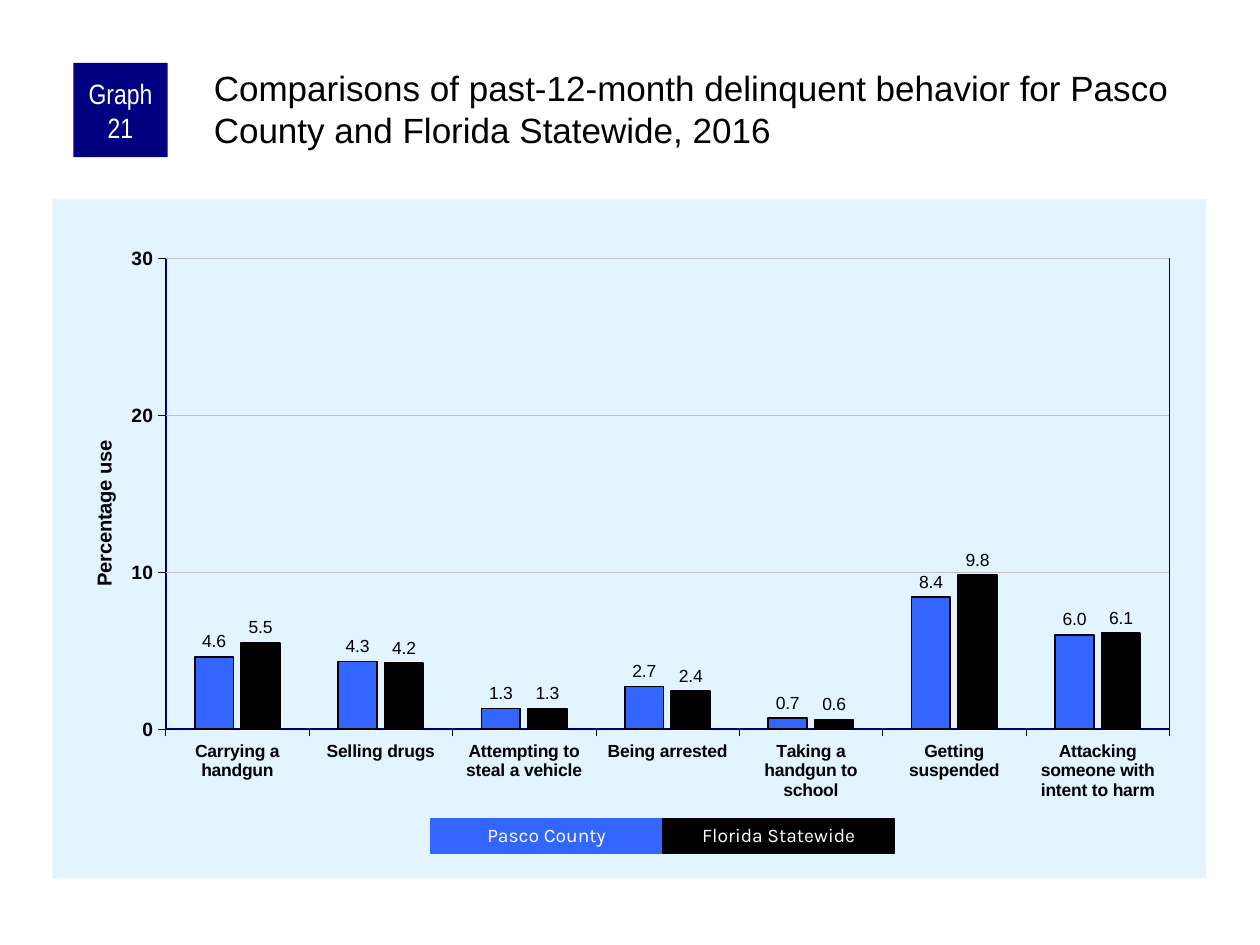
"""Build the slide comparing delinquent behavior in Pasco County and Florida."""
from dataclasses import dataclass

from lxml.etree import SubElement as Sub
from pptx import Presentation
from pptx.chart.data import CategoryChartData as Data
from pptx.dml.color import RGBColor as Rgb
from pptx.enum.chart import XL_CHART_TYPE as Kind
from pptx.enum.chart import XL_LABEL_POSITION as Spot
from pptx.enum.chart import XL_TICK_MARK as Tick
from pptx.enum.shapes import MSO_SHAPE as Form
from pptx.enum.text import MSO_ANCHOR as Anchor
from pptx.enum.text import MSO_AUTO_SIZE as Fit
from pptx.enum.text import PP_ALIGN as Align
from pptx.oxml.ns import qn
from pptx.util import Cm, Pt


@dataclass(frozen=True)
class Theme:
    navy: str = "000080"
    blue: str = "3366FF"
    black: str = "000000"
    white: str = "FFFFFF"
    pale: str = "E1F4FF"
    gray: str = "C0C0C0"
    sans: str = "Arial"
    slim: str = "Arial Narrow"
    key: str = "Karla"
    head: float = 20
    badge: float = 16
    name: float = 11.5
    tag: float = 11
    small: float = 10


T = Theme()
ROWS = [
    ("Carrying a handgun", 4.6, 5.5),
    ("Selling drugs", 4.3, 4.2),
    ("Attempting to steal a vehicle", 1.3, 1.3),
    ("Being arrested", 2.7, 2.4),
    ("Taking a handgun to school", 0.7, 0.6),
    ("Getting suspended", 8.4, 9.8),
    ("Attacking someone with intent to harm", 6.0, 6.1),
]
KEYS = [("Pasco County", T.blue), ("Florida Statewide", T.black)]


def style(font, size, color=T.black, face=T.sans, bold=False):
    font.size, font.name, font.bold = Pt(size), face, bold
    font.color.rgb = Rgb.from_string(color)


def paint(fill, color):
    fill.solid()
    fill.fore_color.rgb = Rgb.from_string(color)


def rule(line, color, width):
    paint(line.fill, color)
    line.width = Pt(width)


def write(frame, text, size, color, face, align=Align.LEFT):
    frame.word_wrap = True
    para = frame.paragraphs[0]
    para.alignment = align
    run = para.add_run()
    run.text = text
    style(run.font, size, color, face)
    return para


def pad(frame, left, top, right, bottom):
    frame.margin_left, frame.margin_top = Cm(left), Cm(top)
    frame.margin_right, frame.margin_bottom = Cm(right), Cm(bottom)


def block(slide, box, color):
    shape = slide.shapes.add_shape(Form.RECTANGLE, *map(Cm, box))
    shape.shadow.inherit = False
    paint(shape.fill, color)
    shape.line.fill.background()
    shape.text_frame.vertical_anchor = Anchor.MIDDLE
    return shape


def badge(slide, text):
    shape = block(slide, (1.48, 1.27, 1.9, 1.9), T.navy)
    pad(shape.text_frame, 0.13, 0, 0.13, 0)
    write(shape.text_frame, text, T.badge, T.white, T.slim, Align.CENTER)


def title(slide, text):
    box = slide.shapes.add_textbox(Cm(4.23), Cm(1.27), Cm(20.12), Cm(2.12))
    pad(box.text_frame, 0.08, 0.08, 0, 0)
    write(box.text_frame, text, T.head, T.black, T.sans)


def legend(slide):
    wide = 4.68
    for i, (text, color) in enumerate(KEYS):
        shape = block(slide, (8.68 + i * wide, 16.51, wide, 0.69), color)
        rule(shape.line, color, 0.75)
        para = write(shape.text_frame, text, T.tag, T.white, T.key, Align.CENTER)
        para.line_spacing = 0.9
        shape.text_frame.auto_size = Fit.SHAPE_TO_FIT_TEXT


def place(layout, **spots):
    manual = Sub(layout, qn("c:manualLayout"))
    for tag, value in spots.items():
        Sub(manual, qn("c:" + tag)).set("val", str(value))


def outline(parent, color, width, fill=None):
    props = Sub(parent, qn("c:spPr"))
    if fill:
        Sub(Sub(props, qn("a:solidFill")), qn("a:srgbClr")).set("val", fill)
    else:
        Sub(props, qn("a:noFill"))
    line = Sub(props, qn("a:ln"))
    if color:
        line.set("w", str(Pt(width)))
        Sub(Sub(line, qn("a:solidFill")), qn("a:srgbClr")).set("val", color)
    else:
        Sub(line, qn("a:noFill"))
    return props


def axes(chart):
    cat, val = chart.category_axis, chart.value_axis
    for axis, size in ((cat, T.small), (val, T.tag)):
        axis.major_tick_mark, axis.minor_tick_mark = Tick.OUTSIDE, Tick.NONE
        style(axis.tick_labels.font, size, bold=True)
        rule(axis.format.line, T.black, 0.25)
    val.minimum_scale, val.maximum_scale, val.major_unit = 0, 30, 10
    rule(val.major_gridlines.format.line, T.gray, 0.25)
    run = val.axis_title.text_frame.paragraphs[0].add_run()
    run.text = "Percentage use"
    style(run.font, T.name, bold=True)
    layout = val.axis_title._element.find(qn("c:layout"))
    place(layout, xMode="edge", yMode="edge", x=0.03, y=0.35)


def bars(chart):
    plot = chart.plots[0]
    plot.gap_width, plot.overlap, plot.vary_by_categories = 150, -20, False
    for series, (_, color) in zip(plot.series, KEYS):
        paint(series.format.fill, color)
        rule(series.format.line, T.black, 1)
        tags = series.data_labels
        tags.show_value, tags.position = True, Spot.OUTSIDE_END
        tags.number_format, tags.number_format_is_linked = "0.0", False
        style(tags.font, T.small)


def graph(slide):
    data = Data(number_format="0")
    data.categories = [row[0] for row in ROWS]
    for i, (name, _) in enumerate(KEYS, 1):
        data.add_series(name, [row[i] for row in ROWS])
    box = map(Cm, (1.06, 4.02, 23.26, 13.69))
    chart = slide.shapes.add_chart(Kind.COLUMN_CLUSTERED, *box, data).chart
    chart.has_legend = chart.has_title = False
    style(chart.font, T.name)
    axes(chart)
    bars(chart)
    root = chart._chartSpace
    area = root.chart.plotArea
    layout = area.find(qn("c:layout"))
    if layout is None:
        layout = Sub(area, qn("c:layout"))
        area.insert(0, layout)
    place(layout, layoutTarget="inner", xMode="edge", yMode="edge",
          x=0.098, y=0.087, w=0.87, h=0.693)
    outline(area, T.navy, 1)
    root.chart.addnext(outline(root, None, 0, T.pale))


def main():
    deck = Presentation()
    deck.slide_width, deck.slide_height = Cm(25.4), Cm(19.05)
    slide = deck.slides.add_slide(deck.slide_layouts[6])
    graph(slide)
    badge(slide, "Graph 21")
    title(slide, "Comparisons of past-12-month delinquent behavior for "
                 "Pasco County and Florida Statewide, 2016")
    legend(slide)
    deck.save("out.pptx")


if __name__ == "__main__":
    main()
